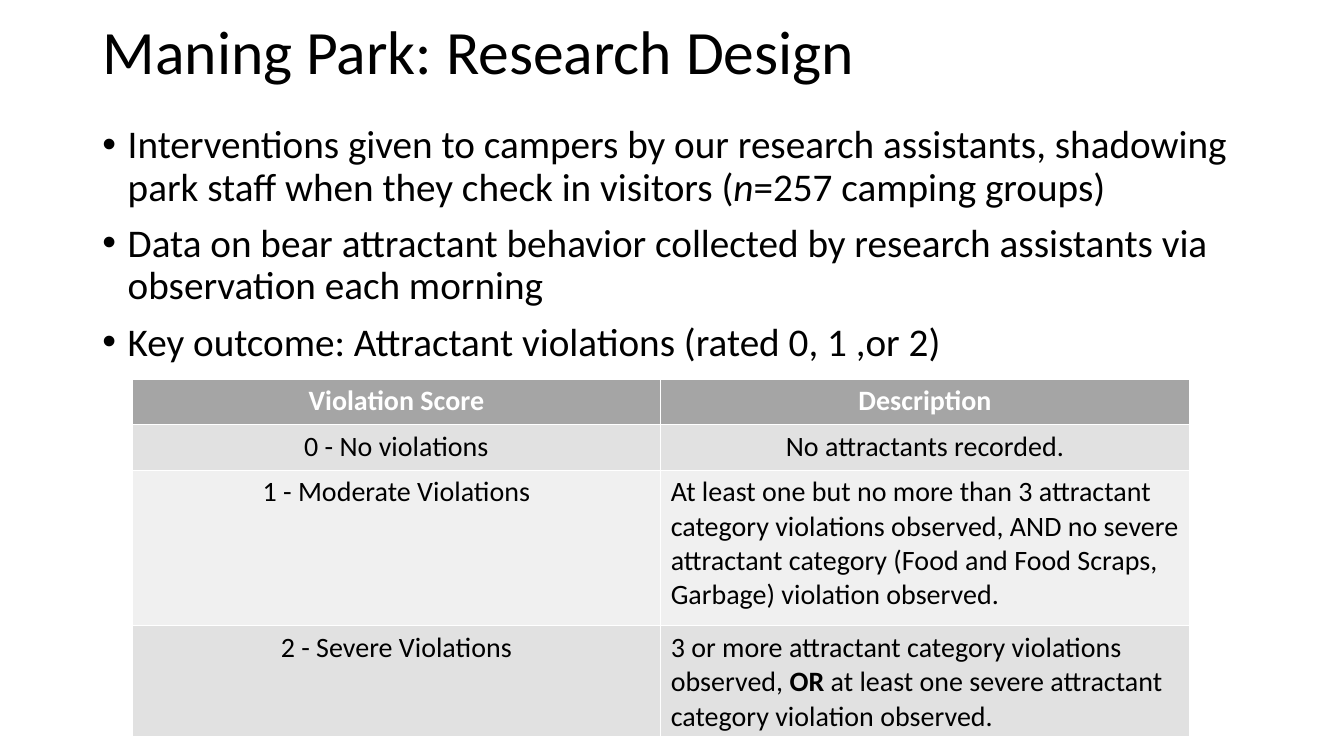
from dataclasses import dataclass

import pptx
import pptx.dml.color
import pptx.enum.text
import pptx.oxml
import pptx.oxml.ns
import pptx.util
from pptx.util import Cm

COLOURS = {"text": "000000", "header_text": "FFFFFF", "header": "A5A5A5",
           "band_dark": "E1E1E1", "band_light": "F0F0F0"}
FONT = "Calibri"
ALIGN = pptx.enum.text.PP_ALIGN
ANCHOR = pptx.enum.text.MSO_ANCHOR


@dataclass(frozen=True)
class Piece:
    text: str
    bold: bool = False
    italic: bool = False


@dataclass(frozen=True)
class ScoreRow:
    score: str
    description: list[Piece]
    height: float
    fill: str
    description_align: ALIGN = ALIGN.LEFT
    header: bool = False


BULLETS = [
    [Piece("Interventions given to campers by our research assistants, "
           "shadowing park staff when they check in visitors ("),
     Piece("n", italic=True), Piece("=257 camping groups)")],
    [Piece("Data on bear attractant behavior collected by research "
           "assistants via observation each morning")],
    [Piece("Key outcome: Attractant violations (rated 0, 1 ,or 2)")],
]

SCORE_ROWS = [
    ScoreRow("Violation Score", [Piece("Description", bold=True)], 1.15,
             "header", ALIGN.CENTER, header=True),
    ScoreRow("0 - No violations", [Piece("No attractants recorded.")], 1.15,
             "band_dark", ALIGN.CENTER),
    ScoreRow("1 - Moderate Violations",
             [Piece("At least one but no more than 3 attractant category "
                    "violations observed, AND no severe attractant category "
                    "(Food and Food Scraps, Garbage) violation observed.")],
             3.92, "band_light"),
    ScoreRow("2 - Severe Violations",
             [Piece("3 or more attractant category violations observed, "),
              Piece("OR", bold=True),
              Piece(" at least one severe attractant category violation "
                    "observed.")],
             2.45, "band_dark"),
]


def rgb(name: str) -> pptx.dml.color.RGBColor:
    return pptx.dml.color.RGBColor.from_string(COLOURS[name])


def write(para, pieces: list[Piece], *, size: float, colour: str = "text",
          align: ALIGN = ALIGN.LEFT, line_spacing: float = 1.0,
          space_before: float = 0) -> None:
    para.alignment = align
    para.line_spacing = line_spacing
    para.space_before = pptx.util.Pt(space_before)
    for piece in pieces:
        span = para.add_run()
        span.text = piece.text
        span.font.name = FONT
        span.font.size = pptx.util.Pt(size)
        span.font.bold = piece.bold
        span.font.italic = piece.italic
        span.font.color.rgb = rgb(colour)


def add_bullet(para) -> None:
    properties = para._p.get_or_add_pPr()
    indent = Cm(0.64)
    properties.set("marL", str(indent))
    properties.set("indent", str(-indent))
    namespace = pptx.oxml.ns.nsdecls("a")
    properties.append(pptx.oxml.parse_xml(
        f'<a:buFont {namespace} typeface="Arial"/>'))
    properties.append(pptx.oxml.parse_xml(
        f'<a:buChar {namespace} char="•"/>'))


def fill_title(title) -> None:
    title.left, title.top = Cm(2.33), Cm(-0.46)
    title.width, title.height = Cm(29.21), Cm(3.68)
    frame = title.text_frame
    frame.auto_size = pptx.enum.text.MSO_AUTO_SIZE.NONE
    frame.vertical_anchor = ANCHOR.MIDDLE
    write(frame.paragraphs[0], [Piece("Maning Park: Research Design")],
          size=44, line_spacing=0.9)


def add_bullets(page) -> None:
    box = page.shapes.add_textbox(Cm(2.33), Cm(3.02), Cm(29.21), Cm(15.49))
    frame = box.text_frame
    frame.word_wrap = True
    for index, pieces in enumerate(BULLETS):
        para = frame.add_paragraph() if index else frame.paragraphs[0]
        add_bullet(para)
        write(para, pieces, size=28, line_spacing=0.9,
              space_before=10 if index else 0)


def add_score_table(page) -> None:
    total_height = sum(row.height for row in SCORE_ROWS)
    table = page.shapes.add_table(len(SCORE_ROWS), 2, Cm(3.33), Cm(9.55),
                                  Cm(26.64), Cm(total_height)).table
    for index, row in enumerate(SCORE_ROWS):
        table.rows[index].height = Cm(row.height)
        contents = [([Piece(row.score, bold=row.header)], ALIGN.CENTER),
                    (row.description, row.description_align)]
        for column, (pieces, align) in enumerate(contents):
            cell = table.cell(index, column)
            cell.fill.solid()
            cell.fill.fore_color.rgb = rgb(row.fill)
            write(cell.text_frame.paragraphs[0], pieces, size=20, align=align,
                  colour="header_text" if row.header else "text")


def main() -> None:
    deck = pptx.Presentation()
    deck.slide_width, deck.slide_height = Cm(33.87), Cm(19.05)
    page = deck.slides.add_slide(deck.slide_layouts.get_by_name("Title Only"))
    fill_title(page.shapes.title)
    add_bullets(page)
    add_score_table(page)
    deck.save("out.pptx")


if __name__ == "__main__":
    main()
